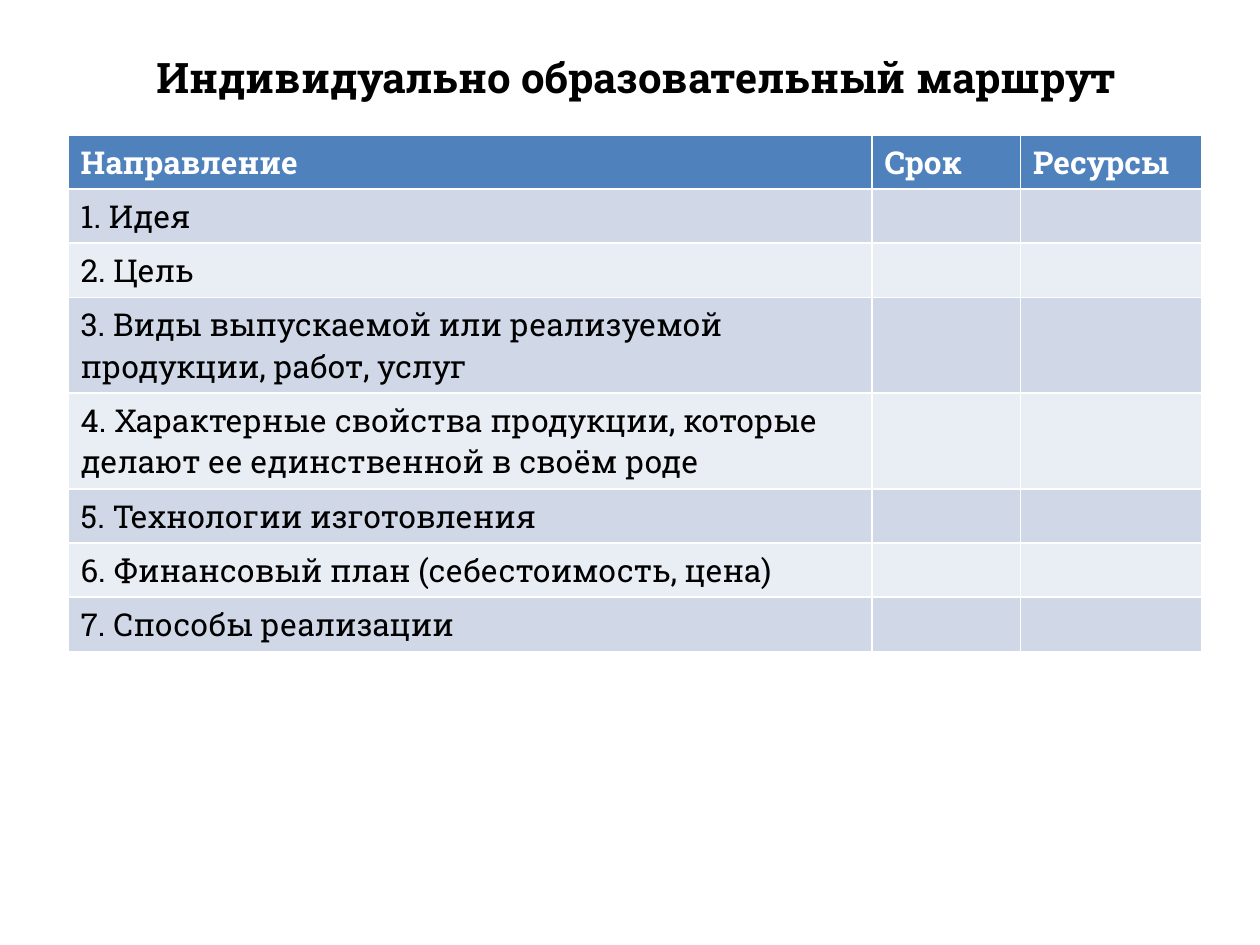
import pptx
import pptx.dml.color
import pptx.enum.text
import pptx.util
from pptx.dml.color import RGBColor
from pptx.util import Inches

FONT = "Roboto Slab"
BLACK = RGBColor(0x00, 0x00, 0x00)
WHITE = RGBColor(0xFF, 0xFF, 0xFF)
HEADER_BLUE = RGBColor(0x4F, 0x81, 0xBD)
BAND_DARK = RGBColor(0xD0, 0xD8, 0xE8)
BAND_LIGHT = RGBColor(0xE9, 0xED, 0xF4)

TITLE = "Индивидуально образовательный маршрут"
HEADERS = ["Направление", "Срок", "Ресурсы"]
DIRECTIONS = [
    "1. Идея",
    "2. Цель",
    "3. Виды выпускаемой или реализуемой продукции, работ, услуг",
    "4. Характерные свойства продукции, которые делают ее единственной в своём роде",
    "5. Технологии изготовления",
    "6. Финансовый план (себестоимость, цена)",
    "7. Способы реализации",
]
COLUMN_WIDTHS = [6.38, 1.18, 1.44]
SINGLE_LINE, DOUBLE_LINE = 0.43, 0.76
ROW_HEIGHTS = [SINGLE_LINE] * 3 + [DOUBLE_LINE] * 2 + [SINGLE_LINE] * 3


def format_font(font, size, color, bold):
    font.name = FONT
    font.size = pptx.util.Pt(size)
    font.bold = bold
    font.color.rgb = color


def add_title(slide, left, top, width, height):
    shape = slide.shapes.add_textbox(
        Inches(left), Inches(top), Inches(width), Inches(height)
    )
    text_frame = shape.text_frame
    text_frame.word_wrap = True
    text_frame.vertical_anchor = pptx.enum.text.MSO_ANCHOR.MIDDLE
    text_frame.text = TITLE
    paragraph = text_frame.paragraphs[0]
    paragraph.alignment = pptx.enum.text.PP_ALIGN.CENTER
    format_font(paragraph.runs[0].font, 24, BLACK, True)


def add_route_table(slide, left, top):
    rows = [HEADERS] + [[direction, "", ""] for direction in DIRECTIONS]
    table = slide.shapes.add_table(
        len(rows), len(HEADERS), Inches(left), Inches(top),
        Inches(sum(COLUMN_WIDTHS)), Inches(sum(ROW_HEIGHTS)),
    ).table
    for column, width in zip(table.columns, COLUMN_WIDTHS):
        column.width = Inches(width)
    for row_index, texts in enumerate(rows):
        table.rows[row_index].height = Inches(ROW_HEIGHTS[row_index])
        is_header = row_index == 0
        band = BAND_DARK if row_index % 2 else BAND_LIGHT
        for column_index, text in enumerate(texts):
            cell = table.cell(row_index, column_index)
            cell.fill.solid()
            cell.fill.fore_color.rgb = HEADER_BLUE if is_header else band
            cell.text = text
            for run in cell.text_frame.paragraphs[0].runs:
                format_font(run.font, 18, WHITE if is_header else BLACK, is_header)


def main():
    presentation = pptx.Presentation()
    presentation.slide_width = Inches(10)
    presentation.slide_height = Inches(7.5)
    slide = presentation.slides.add_slide(presentation.slide_layouts[6])
    add_title(slide, 0.55, 0.3, 9, 0.61)
    add_route_table(slide, 0.54, 1.07)
    presentation.save("out.pptx")


if __name__ == "__main__":
    main()
